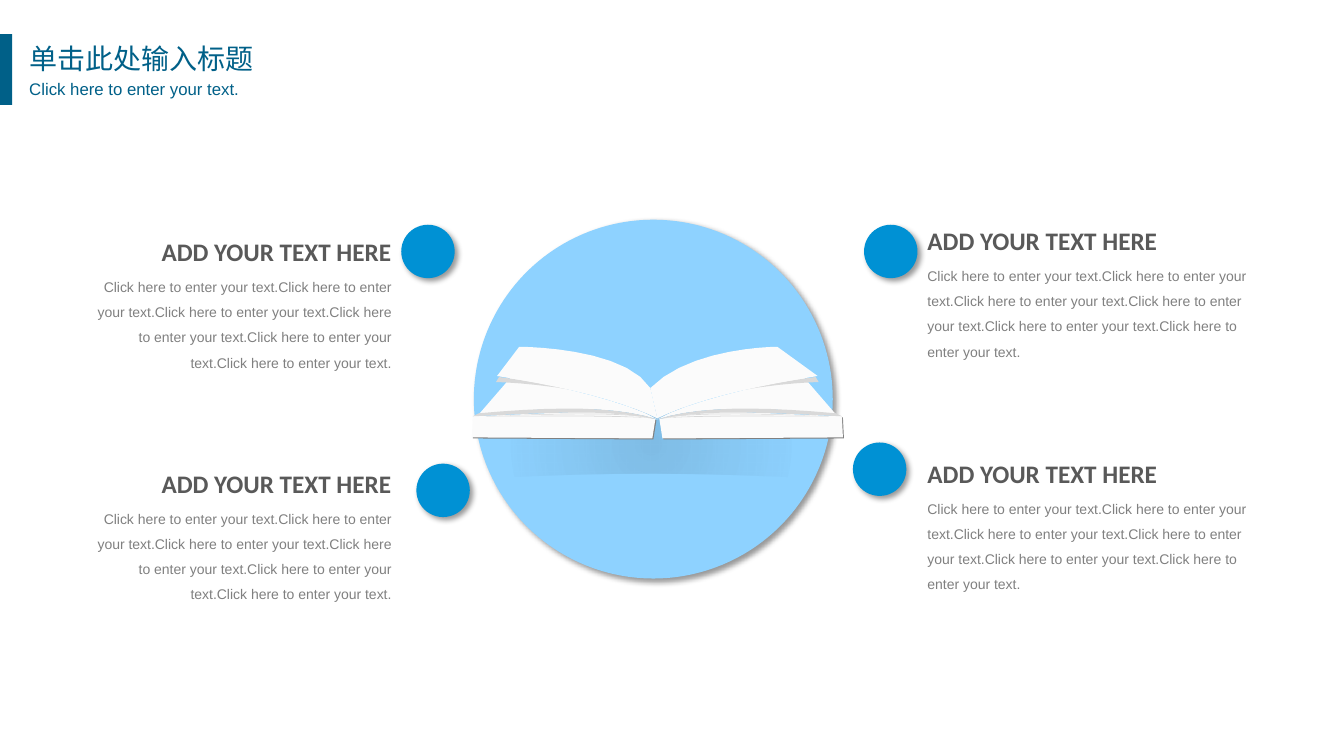
from lxml import etree
from pptx import Presentation
from pptx import util as u
from pptx.dml.color import RGBColor
from pptx.enum import shapes, text
from pptx.oxml import parse_xml
from pptx.oxml.ns import nsdecls, qn

NAVY = RGBColor(0x00, 0x60, 0x88)
BLUE = RGBColor(0x00, 0x91, 0xD4)
SKY = RGBColor(0x8E, 0xD2, 0xFF)
DARK = RGBColor(0x59, 0x59, 0x59)
GREY = RGBColor(0x80, 0x80, 0x80)
PALE = RGBColor(0xD9, 0xD9, 0xD9)
WHITE = RGBColor(0xFB, 0xFB, 0xFB)
BLACK = RGBColor(0, 0, 0)

TITLE = "单击此处输入标题"
LINE = "Click here to enter your text."
HEAD = "ADD YOUR TEXT HERE"
LEFT, RIGHT = text.PP_ALIGN.LEFT, text.PP_ALIGN.RIGHT

# side, top of the heading
ITEMS = [(RIGHT, 2.3), (RIGHT, 4.6), (LEFT, 2.19), (LEFT, 4.5)]
# heading left, body left, body width
SIDES = {RIGHT: (1.5, 0.82, 3.16), LEFT: (9.1, 9.1, 3.48)}
DOTS = [(3.98, 2.23), (8.46, 4.39), (8.57, 2.23), (4.13, 4.6)]

# Half a book: x runs outward from the spine.
# A pair is a corner; six numbers are a Bezier curve from the last point.
SPINE = 6.52
COVER = [(0.02, 4.16), (0.3, 4.08, 0.56, 4.08, 0.64, 4.08), (1.83, 4.13),
         (1.84, 4.34), (0.05, 4.35)]
SHEET = [(0, 4.16), (0.34, 3.95, 1.45, 3.74, 1.45, 3.74), (1.77, 4.11),
         (1, 4.03, 0.4, 4.03, 0, 4.16)]
RIM = [(0, 4.16), (0.4, 4.03, 1, 4.03, 1.77, 4.1), (1.83, 4.13),
       (1, 4.09, 0.5, 4.06, 0, 4.16)]
FOLD = [(0, 4.15), (0.45, 3.88, 1.57, 3.74, 1.57, 3.74), (1.6, 3.79),
        (1.6, 3.79, 0.56, 3.81, 0, 4.15)]
LINES = (4.09, 4.12)
# direction, valley and tip of the top leaf
HALVES = [(-1, 0.07, 1.37), (1, -0.07, 1.19)]
SHADE = [(-2.06, 4.77), (-1.62, 4.05), (1.49, 4.05), (1.94, 4.77),
         (0.54, 4.68, -0.59, 4.67, -2.06, 4.77)]


def trace(segs, steps=10):
    """Turn corners and curves into a list of points."""
    pts = [segs[0]]
    for seg in segs[1:]:
        if len(seg) == 2:
            pts.append(seg)
            continue
        ctrl = [pts[-1], seg[:2], seg[2:4], seg[4:]]
        for i in range(1, steps + 1):
            t = i / steps
            wts = ((1 - t) ** 3, 3 * t * (1 - t) ** 2, 3 * t * t * (1 - t), t ** 3)
            pts.append(tuple(sum(w * c[k] for w, c in zip(wts, ctrl)) for k in (0, 1)))
    return pts


def paint(shape, color):
    shape.shadow.inherit = False
    shape.fill.solid()
    shape.fill.fore_color.rgb = color
    shape.line.fill.background()


def add_page(book, segs, color, way=1, shift=0):
    pts = [(u.Inches(SPINE + way * x + shift), u.Inches(y + shift)) for x, y in trace(segs)]
    pen = book.shapes.build_freeform(*pts[0], scale=1.0)
    pen.add_line_segments(pts[1:], close=True)
    page = pen.convert_to_shape()
    paint(page, color)
    return page


def add_book(slide):
    book = slide.shapes.add_group_shape()
    fade(add_page(book, SHADE, BLACK))
    for way, dip, tip in HALVES:
        add_page(book, COVER, GREY, way, 0.01)
        add_page(book, SHEET, WHITE, way)
        add_page(book, COVER, WHITE, way)
        add_page(book, RIM, PALE, way)
        for y in LINES:
            add_page(book, [(0.05, 4.15), (0.3, y, 0.8, y, 1.7, 4.13),
                            (0.8, y + 0.01, 0.3, y + 0.01, 0.05, 4.15)], PALE, way)
        add_page(book, FOLD, PALE, way)
    for way, dip, tip in HALVES:
        add_page(book, [(dip, 3.85), (0.33, 3.44, tip, 3.44, tip, 3.44), (1.59, 3.73),
                        (0.9, 3.84, 0.35, 3.98, 0, 4.15)], WHITE, way)


def fade(shape):
    """Replace the fill by a soft dark glow that ends clear at the rim."""
    stops = "".join(f'<a:gs pos="{pos}"><a:srgbClr val="000000"><a:alpha val="{alpha}"/>'
                    '</a:srgbClr></a:gs>' for pos, alpha in ((0, 10000), (70000, 0), (100000, 0)))
    grad = parse_xml(f'<a:gradFill {nsdecls("a")} rotWithShape="1"><a:gsLst>{stops}</a:gsLst>'
                     '<a:path path="circle"><a:fillToRect l="50000" t="50000" r="50000" '
                     'b="50000"/></a:path></a:gradFill>')
    props = shape._element.spPr
    props.replace(props.find(qn("a:solidFill")), grad)


def add_disc(slide, x, y, size, color):
    disc = slide.shapes.add_shape(shapes.MSO_SHAPE.OVAL, *map(u.Inches, (x, y, size, size)))
    paint(disc, color)
    glow = etree.SubElement(disc._element.spPr.find(qn("a:effectLst")), qn("a:outerShdw"),
                            blurRad=str(u.Pt(4)), dist=str(u.Pt(3)), dir="2700000",
                            algn="tl", rotWithShape="0")
    tint = etree.SubElement(glow, qn("a:srgbClr"), val="000000")
    etree.SubElement(tint, qn("a:alpha"), val="40000")


def write(box, words, size, font, color, align=LEFT, gap=1.0, bold=False, wrap=True):
    frame = box.text_frame
    frame.text = words
    frame.word_wrap = wrap
    frame.auto_size = text.MSO_AUTO_SIZE.SHAPE_TO_FIT_TEXT
    frame.vertical_anchor = text.MSO_ANCHOR.TOP
    para = frame.paragraphs[0]
    para.alignment, para.line_spacing = align, gap
    look = para.runs[0].font
    look.size, look.name, look.bold = u.Pt(size), font, bold
    look.color.rgb = color
    return para


def add_text(slide, x, y, w, h, *args, **opts):
    box = slide.shapes.add_textbox(*map(u.Inches, (x, y, w, h)))
    return box, write(box, *args, **opts)


def main():
    deck = Presentation()
    deck.slide_width, deck.slide_height = u.Inches(13.33), u.Inches(7.5)
    slide = deck.slides.add_slide(deck.slide_layouts[5])

    title = slide.shapes.title
    title.left, title.top, title.width, title.height = map(u.Inches, (0.19, 0.36, 2.59, 0.46))
    font = "Noto Sans CJK SC"
    para = write(title, TITLE, 20, font, NAVY)
    etree.SubElement(para.runs[0]._r.rPr, qn("a:ea"), typeface=font)
    box, para = add_text(slide, 0.25, 0.7, 2.47, 0.32, LINE, 12, "Arial", NAVY,
                         align=text.PP_ALIGN.JUSTIFY, gap=1.2)
    para.space_before = u.Pt(2.4)
    frame = box.text_frame
    frame.margin_left = frame.margin_right = u.Inches(0.04)
    frame.margin_top = frame.margin_bottom = u.Inches(0.04)
    bar = slide.shapes.add_shape(shapes.MSO_SHAPE.RECTANGLE, *map(u.Inches, (0, 0.34, 0.12, 0.7)))
    paint(bar, NAVY)

    add_disc(slide, 4.7, 2.18, 3.56, SKY)
    add_book(slide)

    for side, top in ITEMS:
        head, body, width = SIDES[side]
        add_text(slide, head, top, 2.48, 0.4, HEAD, 18, "Calibri", DARK,
                 align=side, bold=True, wrap=False)
        add_text(slide, body, top + 0.33, width, 1.1, LINE * 6, 10, "Arial", GREY,
                 align=side, gap=1.5)
    for x, y in DOTS:
        add_disc(slide, x, y, 0.53, BLUE)
    deck.save("out.pptx")


if __name__ == "__main__":
    main()
